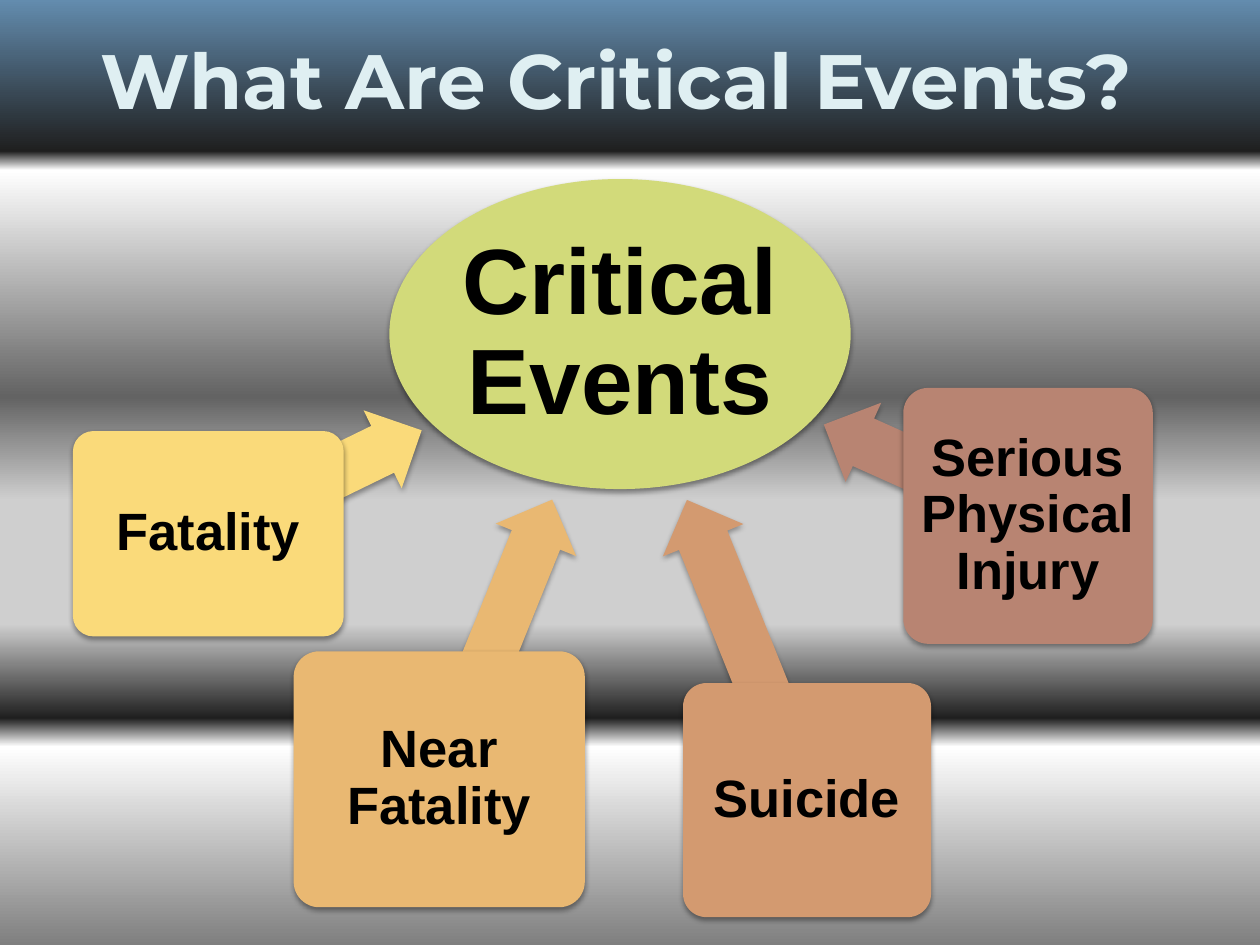
from lxml import etree
from pptx import Presentation
from pptx.dml.color import RGBColor
from pptx.enum import shapes, text
from pptx.oxml import parse_xml
from pptx.oxml.ns import nsdecls, qn
from pptx.util import Cm, Pt

COLORS = {
    "title": "DFEFF2", "outline": "424257", "text": "000000", "hub": "D2DA7A",
    "fatality": "FADA7A", "near": "E9B872", "suicide": "D39A70", "injury": "B88472",
}
BACKGROUND = [
    (0, "638CAE"), (16, "1F1F1F"), (18, "FFFFFF"), (42, "636363"), (53, "CFCFCF"),
    (66, "CFCFCF"), (76, "1F1F1F"), (79, "FFFFFF"), (100, "7F7F7F"),
]
TITLE = ("What Are Critical Events?", (0.99, 0, 22.86, 3.18))
HUB = ("Critical Events", (7.85, 3.61, 9.3, 6.25))
ARROW_HEIGHT = 1.75
EVENTS = [
    ("Fatality", "fatality", (1.47, 8.69, 5.46, 4.14), (3.99, 8.84, 4.75), 154),
    ("Near Fatality", "near", (5.92, 13.13, 5.87, 5.16), (6.96, 12.01, 6.07), 112),
    ("Suicide", "suicide", (13.77, 13.77, 5, 4.72), (11.81, 12.22, 6.5), 68.1),
    ("Serious Physical Injury", "injury", (18.21, 7.82, 5.03, 5.16), (16.41, 8.61, 4.52), 24.2),
]


def rgb(name):
    return RGBColor.from_string(COLORS[name])


def paint_background(s):
    s.background.fill.gradient()
    grad = s.background._cSld.find(".//" + qn("a:gradFill"))
    stops = "".join(
        f'<a:gs pos="{pos * 1000}"><a:srgbClr val="{color}"/></a:gs>' for pos, color in BACKGROUND
    )
    grad.getparent().replace(grad, parse_xml(
        f'<a:gradFill {nsdecls("a")} rotWithShape="1"><a:gsLst>{stops}</a:gsLst>'
        '<a:lin ang="5400000" scaled="0"/></a:gradFill>'
    ))


def write(sp, words, size, font, color, inset):
    tf = sp.text_frame
    tf.word_wrap = True
    tf.vertical_anchor = text.MSO_ANCHOR.MIDDLE
    tf.margin_left = tf.margin_right = tf.margin_top = tf.margin_bottom = Cm(inset)
    p = tf.paragraphs[0]
    p.text = words
    p.alignment = text.PP_ALIGN.CENTER
    p.font.size, p.font.name, p.font.bold = Pt(size), font, True
    p.font.color.rgb = rgb(color)
    return p


def add_shape(s, kind, box, color, opacity=38, distance=1.6):
    sp = s.shapes.add_shape(kind, *map(Cm, box))
    sp.fill.solid()
    sp.fill.fore_color.rgb = rgb(color)
    sp.line.fill.background()
    sp.shadow.inherit = False
    effects = sp._element.spPr.find(qn("a:effectLst"))
    shadow = etree.SubElement(
        effects, qn("a:outerShdw"), blurRad=str(Pt(3.1)), dist=str(Pt(distance)),
        dir="5400000", rotWithShape="0",
    )
    black = etree.SubElement(shadow, qn("a:srgbClr"), val="000000")
    etree.SubElement(black, qn("a:alpha"), val=str(opacity * 1000))
    return sp


def add_title(s):
    words, box = TITLE
    p = write(s.shapes.add_textbox(*map(Cm, box)), words, 44, "Montserrat", "title", 0.25)
    p.runs[0]._r.get_or_add_rPr().insert(0, parse_xml(
        f'<a:ln {nsdecls("a")} w="{Pt(1)}"><a:solidFill>'
        f'<a:srgbClr val="{COLORS["outline"]}"/></a:solidFill></a:ln>'
    ))


def add_node(s, kind, words, box, color, size, inset):
    sp = add_shape(s, kind, box, color)
    write(sp, words, size, "Arial", "text", inset).line_spacing = 0.9
    return sp


def main():
    prs = Presentation()
    prs.slide_width, prs.slide_height = Cm(25.4), Cm(19.05)
    s = prs.slides.add_slide(prs.slide_layouts[6])
    paint_background(s)
    add_title(s)
    add_node(s, shapes.MSO_SHAPE.OVAL, *HUB, "hub", 53, 0.1)
    for words, color, box, arrow_box, angle in EVENTS:
        arrow = add_shape(s, shapes.MSO_SHAPE.LEFT_ARROW, (*arrow_box, ARROW_HEIGHT), color, 35, 1.8)
        arrow.adjustments[0], arrow.adjustments[1] = 0.6, 0.5
        arrow.rotation = angle
        node = add_node(s, shapes.MSO_SHAPE.ROUNDED_RECTANGLE, words, box, color, 30, 0.15)
        node.adjustments[0] = 0.1
    prs.save("out.pptx")


if __name__ == "__main__":
    main()
